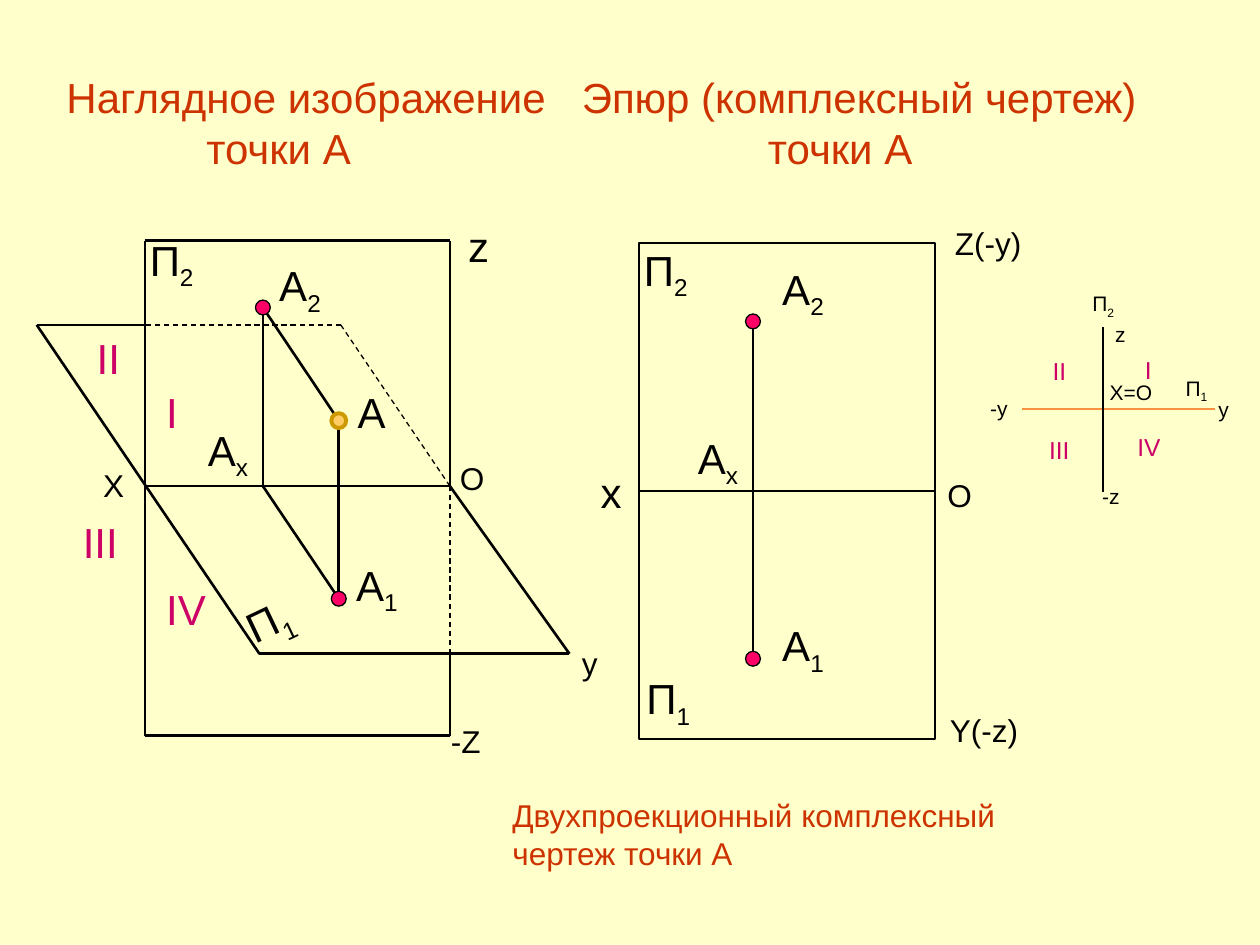
import pptx
import pptx.dml.color
import pptx.enum.dml
import pptx.enum.shapes
import pptx.enum.text
import pptx.oxml.ns
import pptx.util
from lxml import etree

Cm = pptx.util.Cm
Pt = pptx.util.Pt
HUES = {
    "back": "FFFFCC", "ink": "000000", "title": "CC3300", "zone": "CC0066",
    "dot": "FF0066", "gold": "FFCC66", "rim": "CC9900", "axis": "F69240",
}


def tint(name):
    return pptx.dml.color.RGBColor.from_string(HUES[name])


class Board:
    """Holds the style and the current slide; lengths are centimetres."""
    font = "Arial"
    dot_size = 0.3

    def __init__(self, deck):
        self.slide = deck.slides.add_slide(deck.slide_layouts[6])
        fill = self.slide.background.fill
        fill.solid()
        fill.fore_color.rgb = tint("back")

    def text(self, words, left, top, width, size=24, hue="ink", turn=0,
             wrap=False, inset=0):
        """Mark a subscript with "_"; inset indents the lines after the first."""
        lines = words.split("\n")
        high = Pt(size * 1.2 * len(lines) + 7.2)
        box = self.slide.shapes.add_textbox(Cm(left), Cm(top), Cm(width), high)
        box.rotation = turn
        frame = box.text_frame
        frame.word_wrap = wrap
        frame.auto_size = pptx.enum.text.MSO_AUTO_SIZE.SHAPE_TO_FIT_TEXT
        for row, line in enumerate(lines):
            para = frame.add_paragraph() if row else frame.paragraphs[0]
            if row and inset:
                para._p.get_or_add_pPr().set("marL", str(Cm(inset)))
            for low, part in enumerate(line.split("_")):
                run = para.add_run()
                run.text = part
                run.font.name = self.font
                run.font.size = Pt(size)
                run.font.color.rgb = tint(hue)
                if low:
                    run.font._element.set("baseline", "-25000")

    def line(self, start, end, hue="ink", weight=1.5, dash=False):
        kind = pptx.enum.shapes.MSO_CONNECTOR.STRAIGHT
        link = self.slide.shapes.add_connector(
            kind, *(Cm(n) for n in (*start, *end)))
        link.line.color.rgb = tint(hue)
        link.line.width = Pt(weight)
        if dash:
            link.line.dash_style = pptx.enum.dml.MSO_LINE.DASH
        etree.SubElement(link._element.spPr, pptx.oxml.ns.qn("a:effectLst"))
        return link

    def chain(self, *spots, **style):
        """Joins each spot to the next with a line."""
        for start, end in zip(spots, spots[1:]):
            self.line(start, end, **style)

    def shape(self, kind, left, top, width, high, fill=None, rim="ink", weight=1.5):
        item = self.slide.shapes.add_shape(
            kind, Cm(left), Cm(top), Cm(width), Cm(high))
        item.shadow.inherit = False
        if fill:
            item.fill.solid()
            item.fill.fore_color.rgb = tint(fill)
        else:
            item.fill.background()
        item.line.color.rgb = tint(rim)
        item.line.width = Pt(weight)
        return item

    def dot(self, spot, fill="dot", rim="ink", weight=0.75):
        size = self.dot_size
        self.shape(pptx.enum.shapes.MSO_SHAPE.OVAL, spot[0] - size / 2,
                   spot[1] - size / 2, size, size, fill, rim, weight)


def draw_space(board):
    """The two planes in space, with point A and its projections."""
    left, right, top, axis, base = 2.92, 9.07, 4.85, 9.8, 14.83
    rear, front = 6.55, 13.18
    near, far = (5.23, front), (11.48, front)
    hinge, cross = (right, axis), (right, front)

    board.chain(cross, (right, base), (left, base), (left, top), (right, top), hinge)
    board.chain((left, rear), (0.74, rear), near, far, hinge, (left, axis))
    board.chain(cross, hinge, (6.87, rear), (left, rear), weight=0.75, dash=True)

    upper, point, lower = (5.3, 6.2), (6.83, 8.48), (6.83, 12.07)
    board.chain(upper, point, lower, (5.3, axis), upper)
    board.dot(upper)
    board.dot(lower)
    board.dot(point, fill="gold", rim="rim", weight=2.25)

    for label in (("П_2", 2.77, 4.6, 1.42), ("А_2", 5.38, 5.11, 1.4),
                  ("А", 6.96, 7.67, 1.07), ("А_х", 3.94, 8.43, 1.35),
                  ("А_1", 6.93, 11.15, 1.4), ("z", 9.19, 4.32, 0.94)):
        board.text(*label)
    board.text("П_1", 4.72, 11.86, 1.42, turn=334.6)
    for label in (("Х", 1.83, 9.27, 0.94), ("O", 9.02, 9.12, 1.02),
                  ("y", 11.48, 12.85, 0.84), ("-Z", 8.84, 14.43, 1.12)):
        board.text(*label, size=18)
    for label in (("I", 3.1, 7.67, 0.74), ("II", 1.7, 6.58, 0.99),
                  ("III", 1.42, 10.29, 1.22), ("IV", 3.1, 11.63, 1.32)):
        board.text(*label, hue="zone")


def draw_flat(board):
    """The two planes unfolded into one sheet."""
    sheet = board.shape(pptx.enum.shapes.MSO_SHAPE.RECTANGLE, 12.88, 4.9, 5.97, 10)
    axis = board.line((12.88, 9.9), (18.85, 9.9))
    axis.begin_connect(sheet, 1)
    axis.end_connect(sheet, 3)

    upper, lower = (15.18, 6.48), (15.18, 13.28)
    board.line(upper, lower)
    board.dot(upper)
    board.dot(lower)

    for label in (("П_2", 12.73, 4.8, 1.42), ("А_2", 15.52, 5.18, 1.4),
                  ("А_х", 13.82, 8.59, 1.35), ("х", 11.86, 9.27, 0.94),
                  ("А_1", 15.52, 12.37, 1.4), ("П_1", 12.78, 13.44, 1.42)):
        board.text(*label)
    for label in (("Z(-y)", 19, 4.39, 1.85), ("O", 18.85, 9.47, 1.02),
                  ("Y(-z)", 18.9, 14.2, 1.91)):
        board.text(*label, size=18)


def draw_side(board):
    """The four quarters seen along the x axis."""
    board.line((20.6, 8.25), (24.49, 8.25), hue="axis", weight=1)
    board.line((22.23, 6.6), (22.23, 9.91), weight=1)
    for label in (("I", 22.83, 7.04, 0.68), ("II", 20.97, 7.06, 0.84),
                  ("III", 20.9, 8.64, 1), ("IV", 22.68, 8.59, 1.02)):
        board.text(*label, size=14, hue="zone")
    for label in (("П_2", 21.77, 5.74, 1.14), ("П_1", 23.65, 7.44, 1.07),
                  ("Х=O", 22.12, 7.52, 1.37)):
        board.text(*label, size=12, wrap=True)
    for label in (("y", 24.31, 7.87, 0.71), ("-y", 19.71, 7.85, 0.86),
                  ("z", 22.23, 6.35, 0.74), ("-z", 21.97, 9.63, 0.86)):
        board.text(*label, size=12)


def main():
    deck = pptx.Presentation()
    deck.slide_width, deck.slide_height = Cm(25.4), Cm(19.05)
    board = Board(deck)
    board.text("Наглядное изображение\nточки А", 1.09, 1.32, 10.21,
               hue="title", inset=2.82)
    board.text("Эпюр (комплексный чертеж)\nточки А", 11.48, 1.32, 11.71,
               hue="title", inset=3.75)
    draw_space(board)
    draw_flat(board)
    draw_side(board)
    board.text("Двухпроекционный комплексный\nчертеж точки А", 10.08, 15.93, 10.54,
               size=18, hue="title")
    deck.save("out.pptx")


if __name__ == "__main__":
    main()
